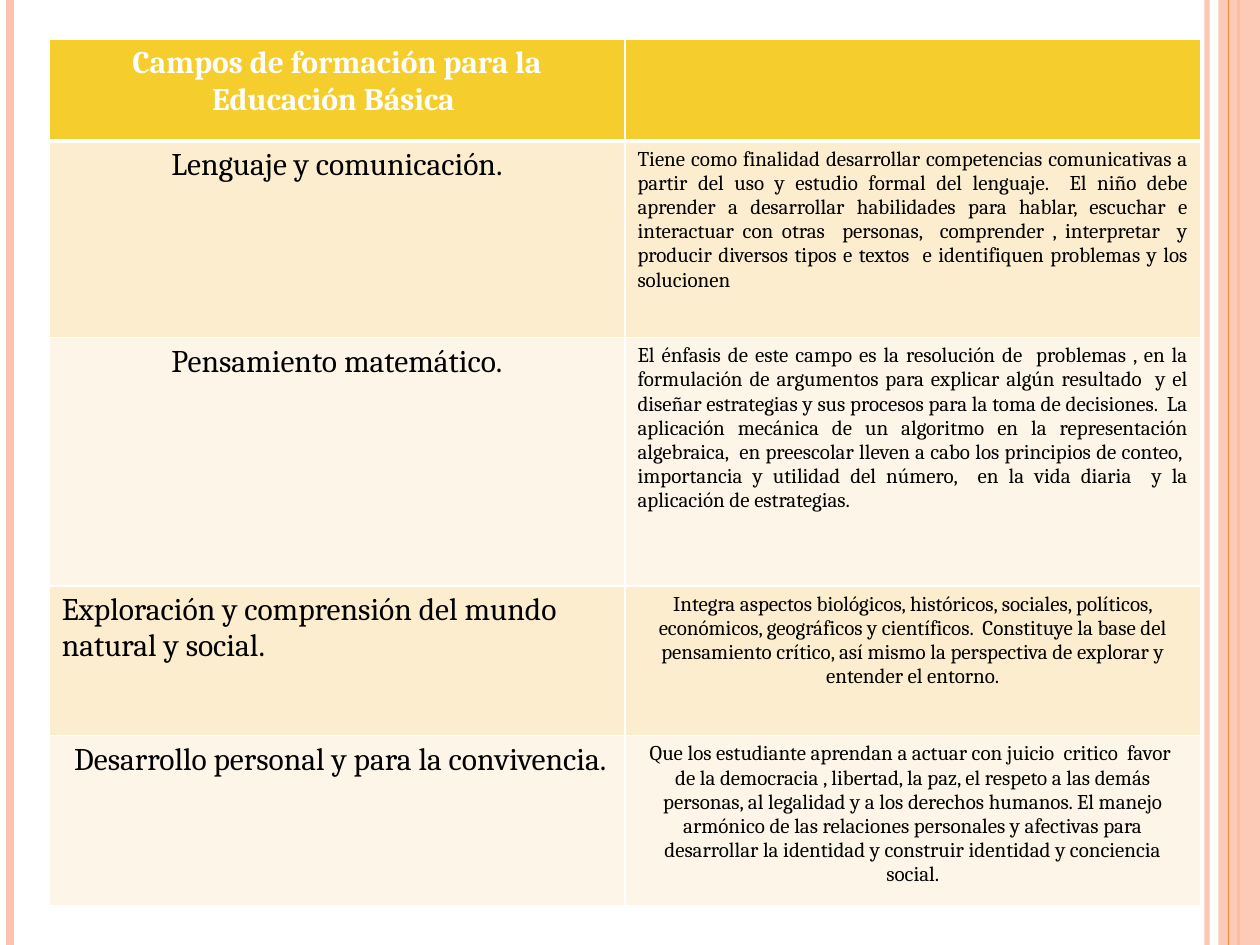
import pptx
import pptx.dml.color
import pptx.enum.shapes
import pptx.enum.text
import pptx.oxml.ns
import pptx.util
from lxml import etree
from pptx.util import Inches

RGBColor = pptx.dml.color.RGBColor
ALIGN = pptx.enum.text.PP_ALIGN
qn = pptx.oxml.ns.qn

PINK = RGBColor(0xFE, 0xC3, 0xAE)
ORANGE = RGBColor(0xFE, 0x86, 0x37)
GOLD = RGBColor(0xF5, 0xCD, 0x2D)
SAND = RGBColor(0xFB, 0xED, 0xCD)
CREAM = RGBColor(0xFD, 0xF6, 0xE8)
WHITE = RGBColor(0xFF, 0xFF, 0xFF)
BLACK = RGBColor(0x00, 0x00, 0x00)


def set_opacity(element, percent):
    color = next(element.iter(qn("a:srgbClr")))
    etree.SubElement(color, qn("a:alpha"), val=str(percent * 1000))


def add_border(cell, side, width):
    """Draw a white border; side is one of L, R, T, B, added in that order."""
    line = etree.SubElement(cell._tc.get_or_add_tcPr(), qn(f"a:ln{side}"),
                            w=str(pptx.util.Pt(width)))
    fill = etree.SubElement(line, qn("a:solidFill"))
    etree.SubElement(fill, qn("a:srgbClr"), val=str(WHITE))


prs = pptx.Presentation()
prs.slide_width, prs.slide_height = Inches(10), Inches(7.5)
slide = prs.slides.add_slide(prs.slide_layouts[6])

# Vertical stripes at both edges: x, colour, width, opacity.
# The band is placed between the third and the last of them.
stripes = [
    (9.58, PINK, 3, 93),
    (0.08, PINK, 4.5, 100),
    (9.83, ORANGE, 1.5, 100),
    (9.75, ORANGE, 0.75, 100),
]
for x, color, width, opacity in stripes:
    if x == 9.75:
        band = slide.shapes.add_shape(pptx.enum.shapes.MSO_SHAPE.RECTANGLE,
                                      Inches(9.67), 0, Inches(0.33), prs.slide_height)
        band.shadow.inherit = False
        band.fill.solid()
        band.fill.fore_color.rgb = PINK
        set_opacity(band._element.spPr, 87)
        band.line.fill.background()
    stripe = slide.shapes.add_connector(pptx.enum.shapes.MSO_CONNECTOR.STRAIGHT,
                                        Inches(x), 0, Inches(x), prs.slide_height)
    stripe.line.color.rgb = color
    stripe.line.width = pptx.util.Pt(width)
    if opacity < 100:
        set_opacity(stripe._element.spPr, opacity)
    etree.SubElement(stripe._element.spPr, qn("a:effectLst"))

# Each row: height, field and its alignment, description and its alignment
rows = [
    (0.81, "Campos de formación para la Educación Básica ", ALIGN.CENTER, "", ALIGN.LEFT),
    (1.56, "Lenguaje y comunicación.", ALIGN.CENTER,
     "Tiene como finalidad desarrollar competencias comunicativas a partir del uso y "
     "estudio formal del lenguaje.  El niño debe aprender a desarrollar habilidades para "
     "hablar, escuchar e interactuar con otras  personas,  comprender , interpretar  y "
     "producir diversos tipos e textos  e identifiquen problemas y los solucionen",
     ALIGN.JUSTIFY),
    (1.97, "Pensamiento matemático.", ALIGN.CENTER,
     "El énfasis de este campo es la resolución de  problemas , en la formulación de "
     "argumentos para explicar algún resultado  y el diseñar estrategias y sus procesos "
     "para la toma de decisiones.  La aplicación mecánica de un algoritmo en la "
     "representación algebraica,  en preescolar lleven a cabo los principios de conteo,  "
     "importancia y utilidad del número,  en la vida diaria  y la aplicación de "
     "estrategias.",
     ALIGN.JUSTIFY),
    (1.19, "Exploración y comprensión del mundo natural y social.", ALIGN.LEFT,
     "Integra aspectos biológicos, históricos, sociales, políticos, económicos, "
     "geográficos y científicos.  Constituye la base del pensamiento crítico, así mismo "
     "la perspectiva de explorar y entender el entorno.",
     ALIGN.CENTER),
    (1.35, " Desarrollo personal y para la convivencia.", ALIGN.CENTER,
     "Que los estudiante aprendan a actuar con juicio  critico  favor  de la democracia , "
     "libertad, la paz, el respeto a las demás personas, al legalidad y a los derechos "
     "humanos. El manejo armónico de las relaciones personales y afectivas para "
     "desarrollar la identidad y construir identidad y conciencia social.",
     ALIGN.CENTER),
]

fields = slide.shapes.add_table(len(rows), 2, Inches(0.39), Inches(0.31),
                                Inches(9.14), Inches(6.88)).table
for r, (height, field, field_align, description, description_align) in enumerate(rows):
    fields.rows[r].height = Inches(height)
    is_header = r == 0
    contents = [(field, field_align, 18), (description, description_align, 12)]
    for c, (text, align, size) in enumerate(contents):
        cell = fields.cell(r, c)
        for side in "LRTB":
            thick = (is_header and side == "B") or (r == 1 and side == "T")
            add_border(cell, side, 3 if thick else 1)
        cell.fill.solid()
        cell.fill.fore_color.rgb = GOLD if is_header else (SAND if r % 2 else CREAM)
        cell.text_frame.text = text
        paragraph = cell.text_frame.paragraphs[0]
        paragraph.alignment = align
        for run in paragraph.runs:
            run.font.name = "Cambria"
            run.font.size = pptx.util.Pt(size)
            run.font.bold = is_header
            run.font.color.rgb = WHITE if is_header else BLACK

prs.save("out.pptx")
